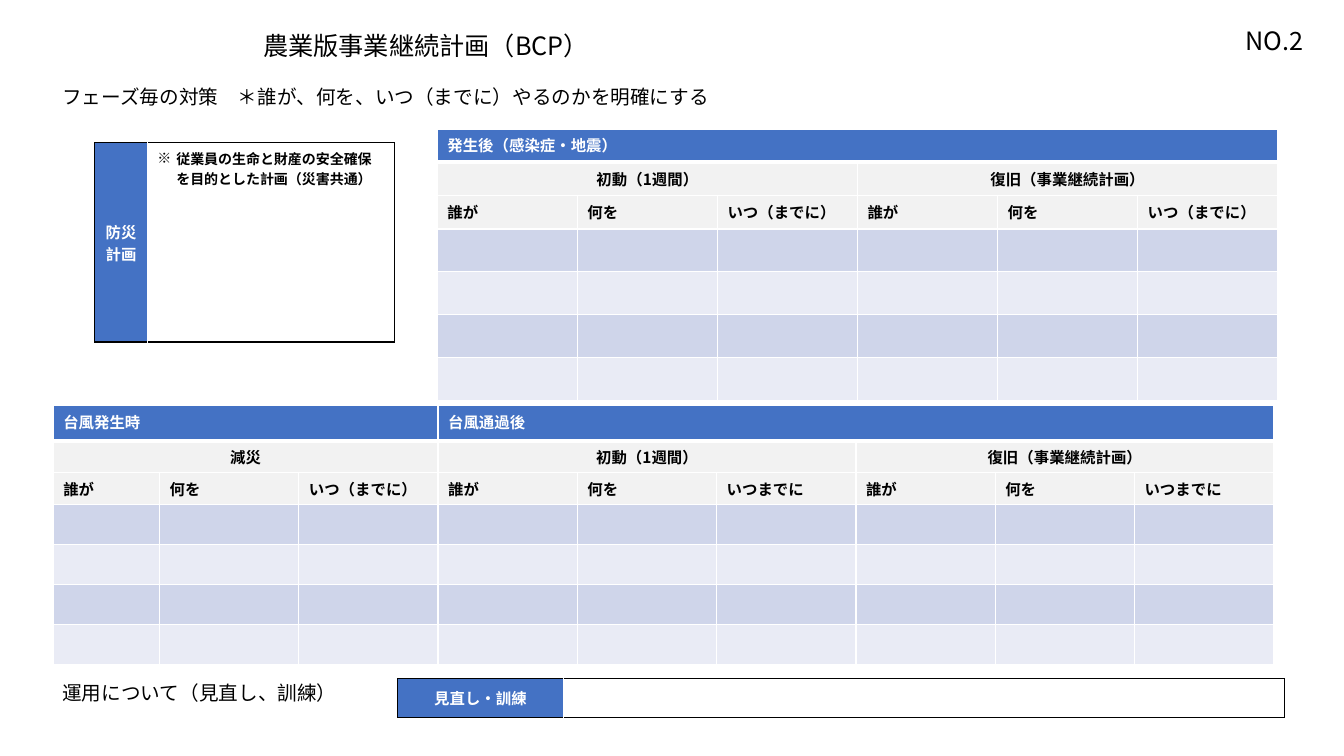
from dataclasses import dataclass
from pptx import Presentation, util as u
from pptx.dml.color import RGBColor
from pptx.enum import text as t
from pptx.oxml import ns
from lxml import etree


@dataclass
class Theme:
    face: str = "Noto Sans CJK JP"
    white: str = "FFFFFF"
    black: str = "000000"
    blue: str = "4472C4"
    gray: str = "F2F2F2"
    bands: tuple = ("CFD5EA", "E9EBF5")
    title: int = 18
    lead: int = 14
    body: int = 11
    note: int = 10


theme = Theme()


def write(para, words, size, color, bold=False, align=t.PP_ALIGN.LEFT):
    para.alignment = align
    run = para.add_run()
    run.text = words
    look = {"name": theme.face, "size": u.Pt(size), "bold": bold}
    for key, val in look.items():
        setattr(run.font, key, val)
    run.font.color.rgb = RGBColor.from_string(color)
    face = etree.SubElement(run.font._element, ns.qn("a:ea"))
    face.set("typeface", theme.face)


def paint(cell, fill, edges):
    cell.fill.solid()
    cell.fill.fore_color.rgb = RGBColor.from_string(fill)
    props = cell._tc.get_or_add_tcPr()
    for spot, (side, (color, width)) in enumerate(zip("LRTB", edges)):
        line = etree.Element(ns.qn(f"a:ln{side}"), w=str(u.Pt(width)))
        solid = etree.SubElement(line, ns.qn("a:solidFill"))
        etree.SubElement(solid, ns.qn("a:srgbClr"), val=color)
        props.insert(spot, line)
    end = cell.text_frame.paragraphs[0]._p.get_or_add_endParaRPr()
    end.set("sz", str(theme.body * 100))


deck = Presentation()
deck.slide_width, deck.slide_height = u.Cm(33.87), u.Cm(19.05)
slide = deck.slides.add_slide(deck.slide_layouts[6])

left, mid = t.PP_ALIGN.LEFT, t.PP_ALIGN.CENTER
labels = [
    ("農業版事業継続計画（BCP）", 6.38, 0.64, 15.7, 1.03, theme.title, left),
    ("フェーズ毎の対策　＊誰が、何を、いつ（までに）やるのかを明確にする", 1.32, 2.01, 17.2, 0.86, theme.lead, left),
    ("運用について（見直し、訓練）", 1.32, 17.04, 11.23, 0.86, theme.lead, left),
    ("NO.2", 30.56, 0.51, 3.12, 1.03, theme.title, mid),
]
for words, x, y, wide, high, size, align in labels:
    frame = slide.shapes.add_textbox(*map(u.Cm, (x, y, wide, high))).text_frame
    frame.word_wrap = True
    write(frame.paragraphs[0], words, size, theme.black, align=align)

thin, thick, dark = (theme.white, 1), (theme.white, 3), (theme.black, 1)
first, later = "初動（1週間）", "復旧（事業継続計画）"
long = ["誰が", "何を", "いつ（までに）"]
short = ["誰が", "何を", "いつまでに"]
grids = [
    (1.34, 10.21, [2.68] + [3.51] * 8, [0.9, 0.8, 0.8] + [1.01] * 4,
     [[("台風発生時", 3), ("台風通過後", 6)],
      [("減災", 3), (first, 3), (later, 3)],
      [(word, 1) for word in long + short * 2]]),
    (11.02, 3.25, [3.53] * 6, [0.84] * 3 + [1.08] * 4,
     [[("発生後（感染症・地震）", 6)],
      [(first, 3), (later, 3)],
      [(word, 1) for word in long * 2]]),
]
boxes = [
    (2.39, 3.6, [1.32, 6.23], [5.02], "防災計画", "従業員の生命と財産の安全確保を目的とした計画（災害共通）"),
    (10.02, 17.1, [4.18, 18.17], [0.97], "見直し・訓練", ""),
]

tables = []
for x, y, cols, rows, *rest in grids + boxes:
    size = map(u.Cm, (x, y, sum(cols), sum(rows)))
    table = slide.shapes.add_table(len(rows), len(cols), *size).table
    table.first_row = table.horz_banding = False
    for col, wide in zip(table.columns, cols):
        col.width = u.Cm(wide)
    for row, high in zip(table.rows, rows):
        row.height = u.Cm(high)
    tables.append((table, rest))

for table, (heads,) in tables[:len(grids)]:
    fills = [theme.blue, theme.gray, theme.gray, *theme.bands * 2]
    for at, (row, fill) in enumerate(zip(table.rows, fills)):
        base = thin if at else thick
        roof = thick if at == 1 else thin
        for cell in row.cells:
            paint(cell, fill, [thin, thin, roof, base])
    for at, head in enumerate(heads):
        col = 0
        for words, span in head:
            cell = table.cell(at, col)
            if span > 1:
                cell.merge(table.cell(at, col + span - 1))
            write(cell.text_frame.paragraphs[0], words, theme.body,
                  theme.black if at else theme.white, True, mid if at == 1 else left)
            col += span

for table, (name, note) in tables[len(grids):]:
    tag, room = table.cell(0, 0), table.cell(0, 1)
    paint(tag, theme.blue, [dark, thin, dark, dark])
    paint(room, theme.white, [thin, dark, dark, dark])
    tag.vertical_anchor = t.MSO_ANCHOR.MIDDLE
    write(tag.text_frame.paragraphs[0], name, theme.body, theme.white, True, mid)
    if note:
        para = room.text_frame.paragraphs[0]
        write(para, note, theme.note, theme.black, True)
        props = para._p.get_or_add_pPr()
        for key, val in {"marL": 0.48, "indent": -0.48}.items():
            props.set(key, str(u.Cm(val)))
        etree.SubElement(props, ns.qn("a:buFont"), typeface=theme.face)
        etree.SubElement(props, ns.qn("a:buChar"), char="※")

deck.save("out.pptx")
